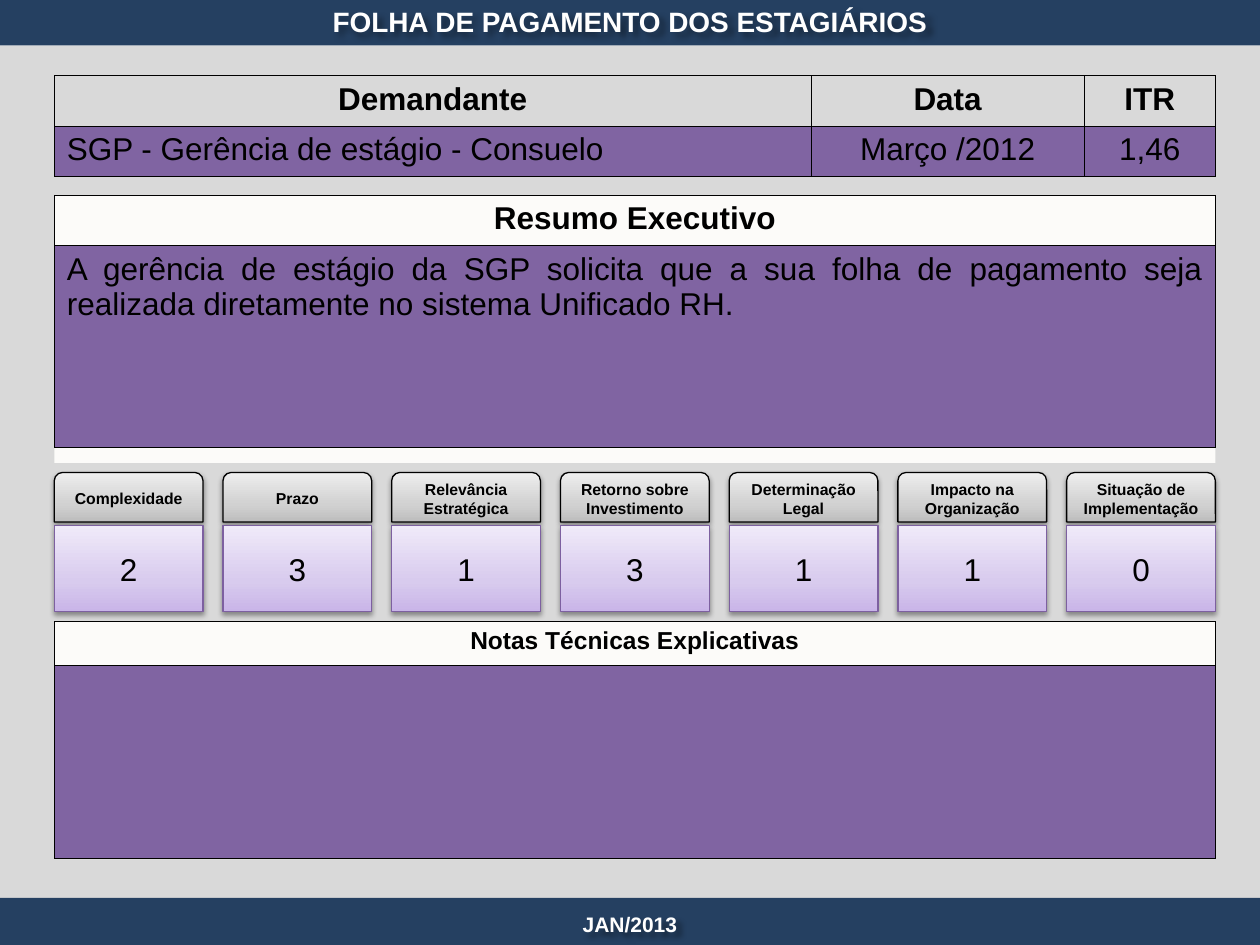
from lxml import etree
from pptx import Presentation
from pptx.dml.color import RGBColor
from pptx.enum.shapes import MSO_SHAPE
from pptx.enum.text import MSO_ANCHOR, PP_ALIGN
from pptx.oxml import parse_xml
from pptx.oxml.ns import nsdecls, qn
from pptx.util import Pt

RECT = MSO_SHAPE.RECTANGLE
ROUND_TOP = MSO_SHAPE.ROUND_2_SAME_RECTANGLE
LEFT, CENTER, JUSTIFY = PP_ALIGN.LEFT, PP_ALIGN.CENTER, PP_ALIGN.JUSTIFY
MIDDLE = MSO_ANCHOR.MIDDLE

W, H = 720, 540
MARGIN, CONTENT_W = 31, 663.5
NAVY, GREY, CREAM, PURPLE = "254061", "D9D9D9", "FCFBF9", "8064A2"
GREY_STOPS = [(0, "BDBDBD"), (35, "D1D1D1"), (100, "EEEEEE")]
LILAC_STOPS = [(0, "C9B5E8"), (35, "D8CBEE"), (100, "F0EAF9")]


def color(value):
    return RGBColor.from_string(value)


def write(tf, text, size=18, bold=False, fill="000000", align=CENTER):
    p = tf.paragraphs[0]
    p.alignment = align
    r = p.add_run()
    r.text = text
    r.font.name = "Arial"
    r.font.size = Pt(size)
    r.font.bold = bold
    r.font.color.rgb = color(fill)


class Deck:
    def __init__(self):
        self.prs = Presentation()
        self.prs.slide_width, self.prs.slide_height = Pt(W), Pt(H)
        self.s = self.prs.slides.add_slide(self.prs.slide_layouts[6])

    def box(self, x, y, w, h, fill=None, kind=RECT):
        sp = self.s.shapes.add_shape(kind, Pt(x), Pt(y), Pt(w), Pt(h))
        sp.shadow.inherit = False
        sp.line.fill.background()
        if fill:
            sp.fill.solid()
            sp.fill.fore_color.rgb = color(fill)
        return sp

    def drop_shadow(self, sp, blur=3.1, dist=1.6, angle=90):
        sp.shadow.inherit = False
        effects = sp._element.spPr.find(qn("a:effectLst"))
        effects.append(parse_xml(
            f'<a:outerShdw {nsdecls("a")} blurRad="{Pt(blur)}" dist="{Pt(dist)}" '
            f'dir="{angle * 60000}" rotWithShape="0"><a:srgbClr val="000000">'
            '<a:alpha val="38000"/></a:srgbClr></a:outerShdw>'))

    def card(self, x, y, w, h, stops, line, kind, text, **fmt):
        sp = self.box(x, y, w, h, kind=kind)
        gs = "".join(f'<a:gs pos="{pos * 1000}"><a:srgbClr val="{c}"/></a:gs>'
                     for pos, c in stops)
        geometry = sp._element.spPr.find(qn("a:prstGeom"))
        geometry.addnext(parse_xml(
            f'<a:gradFill {nsdecls("a")} rotWithShape="1"><a:gsLst>{gs}</a:gsLst>'
            '<a:lin ang="16200000" scaled="0"/></a:gradFill>'))
        sp.line.color.rgb = color(line)
        sp.line.width = Pt(0.75)
        self.drop_shadow(sp)
        tf = sp.text_frame
        tf.word_wrap = True
        tf.vertical_anchor = MIDDLE
        write(tf, text, **fmt)

    def label(self, x, y, w, h, text, **fmt):
        sp = self.s.shapes.add_textbox(Pt(x), Pt(y), Pt(w), Pt(h))
        tf = sp.text_frame
        tf.word_wrap = True
        tf.vertical_anchor = MIDDLE
        write(tf, text, bold=True, fill="FFFFFF", **fmt)
        self.drop_shadow(sp, blur=3, dist=3, angle=45)

    def table(self, y, widths, heights, rows, aligns, head_size=18):
        """Bold header without fill, body rows in translucent purple."""
        table = self.s.shapes.add_table(
            len(rows), len(widths), Pt(MARGIN), Pt(y),
            Pt(sum(widths)), Pt(sum(heights))).table
        table.first_row = table.horz_banding = False
        for col, width in zip(table.columns, widths):
            col.width = Pt(width)
        for i, (row, height) in enumerate(zip(rows, heights)):
            table.rows[i].height = Pt(height)
            for j, text in enumerate(row):
                cell = table.cell(i, j)
                self.border(cell)
                if i == 0:
                    cell.fill.background()
                    write(cell.text_frame, text, size=head_size, bold=True)
                    continue
                cell.fill.solid()
                cell.fill.fore_color.rgb = color(PURPLE)
                clr = cell._tc.tcPr.find(".//" + qn("a:srgbClr"))
                etree.SubElement(clr, qn("a:alpha")).set("val", "20000")
                if text:
                    write(cell.text_frame, text, align=aligns[j])

    def border(self, cell):
        tcPr = cell._tc.get_or_add_tcPr()
        for side in "LRTB":
            tcPr.append(parse_xml(
                f'<a:ln{side} {nsdecls("a")} w="{Pt(0.25)}"><a:solidFill>'
                f'<a:srgbClr val="000000"/></a:solidFill></a:ln{side}>'))


def main():
    deck = Deck()

    # Background and bars
    deck.box(0, 26, W, 493, GREY)
    deck.box(0, 513, W, 27, NAVY)
    deck.box(0, -1, W, 27, NAVY)
    deck.label(0, 514, W, 28, "JAN/2013", size=12)

    # Panel and title
    deck.box(MARGIN, 111.5, CONTENT_W, 153, CREAM)
    deck.label(0, -8, W, 40, "FOLHA DE PAGAMENTO DOS ESTAGIÁRIOS", size=16)

    # Request and summary
    deck.table(43, [432.5, 156, 75], [28.5, 28.5],
               [["Demandante", "Data", "ITR"],
                ["SGP - Gerência de estágio - Consuelo", "Março /2012", "1,46"]],
               [LEFT, CENTER, CENTER])
    deck.table(111.5, [CONTENT_W], [27, 115.5],
               [["Resumo Executivo"],
                ["A gerência de estágio da SGP solicita que a sua folha de pagamento "
                 "seja realizada diretamente no sistema Unificado RH."]],
               [JUSTIFY])

    # Technical notes
    deck.box(MARGIN, 355, CONTENT_W, 136, CREAM)
    deck.table(355, [CONTENT_W], [25, 110.5],
               [["Notas Técnicas Explicativas"], [""]], [LEFT], head_size=14)

    # Scores
    scores = [("Complexidade", 2), ("Prazo", 3), ("Relevância Estratégica", 1),
              ("Retorno sobre Investimento", 3), ("Determinação Legal", 1),
              ("Impacto na Organização", 1), ("Situação de Implementação", 0)]
    card_w = 85
    step = (CONTENT_W - card_w) / (len(scores) - 1)
    for i, (name, score) in enumerate(scores):
        x = MARGIN + i * step
        deck.card(x, 270, card_w, 28.3, GREY_STOPS, "000000", ROUND_TOP,
                  name, size=9, bold=True)
        deck.card(x, 300.3, card_w, 49, LILAC_STOPS, "7D60A0", RECT, str(score))

    deck.prs.save("out.pptx")


if __name__ == "__main__":
    main()
